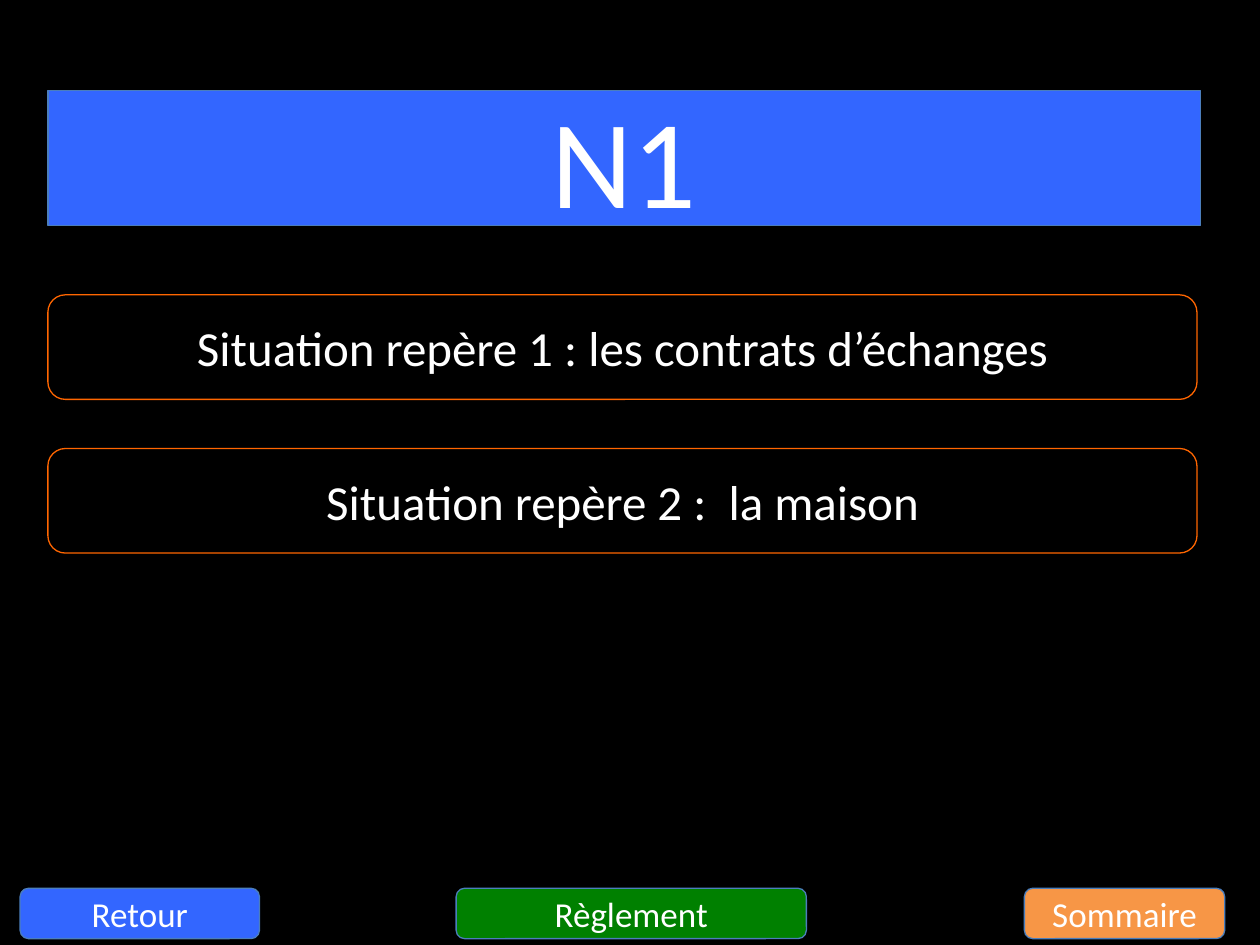
from pptx import Presentation
from pptx.dml.color import RGBColor
from pptx.enum.shapes import MSO_SHAPE
from pptx.enum.text import MSO_ANCHOR, PP_ALIGN
from pptx.util import Inches, Pt

RECT = MSO_SHAPE.RECTANGLE
ROUNDED = MSO_SHAPE.ROUNDED_RECTANGLE
MIDDLE = MSO_ANCHOR.MIDDLE
CENTER = PP_ALIGN.CENTER

COLORS = {
    "background": "000000",
    "text": "FFFFFF",
    "blue": "3366FF",
    "green": "008000",
    "orange": "F79646",
    "edge": "4B7EBC",
    "situation": "FF6600",
}


def rgb(name):
    return RGBColor.from_string(COLORS[name])


class MenuSlide:
    """Holds the style and the current slide."""

    font = "Calibri"
    line_width = Pt(0.75)

    def __init__(self, prs):
        self.slide = prs.slides.add_slide(prs.slide_layouts[6])
        background = self.slide.background.fill
        background.solid()
        background.fore_color.rgb = rgb("background")

    def box(self, kind, text, bounds, size, fill=None, line="edge"):
        shape = self.slide.shapes.add_shape(kind, *map(Inches, bounds))
        shape.shadow.inherit = False
        if fill:
            shape.fill.solid()
            shape.fill.fore_color.rgb = rgb(fill)
        else:
            shape.fill.background()
        shape.line.color.rgb = rgb(line)
        shape.line.width = self.line_width

        frame = shape.text_frame
        frame.word_wrap = True
        frame.vertical_anchor = MIDDLE
        paragraph = frame.paragraphs[0]
        paragraph.text = text
        paragraph.alignment = CENTER
        paragraph.font.name = self.font
        paragraph.font.size = Pt(size)
        paragraph.font.color.rgb = rgb("text")

    def title(self, text):
        self.box(RECT, text, (0.38, 0.72, 9.15, 1.07), 72, fill="blue")

    def situation(self, text, top):
        self.box(ROUNDED, text, (0.38, top, 9.12, 0.83), 28, line="situation")

    def button(self, text, left, width, fill):
        self.box(ROUNDED, text, (left, 7.05, width, 0.4), 20, fill=fill)


def main():
    prs = Presentation()
    prs.slide_width, prs.slide_height = Inches(10), Inches(7.5)
    menu = MenuSlide(prs)

    # Level title
    menu.title("N1")

    # Reference situations
    situations = (
        "Situation repère 1 : les contrats d’échanges",
        "Situation repère 2 :  la maison",
    )
    for row, situation in enumerate(situations):
        menu.situation(situation, 2.34 + row * 1.22)

    # Navigation buttons
    for label, left, width, fill in (
        ("Retour", 0.16, 1.9, "blue"),
        ("Règlement", 3.62, 2.78, "green"),
        ("Sommaire", 8.13, 1.59, "orange"),
    ):
        menu.button(label, left, width, fill)

    prs.save("out.pptx")


if __name__ == "__main__":
    main()
